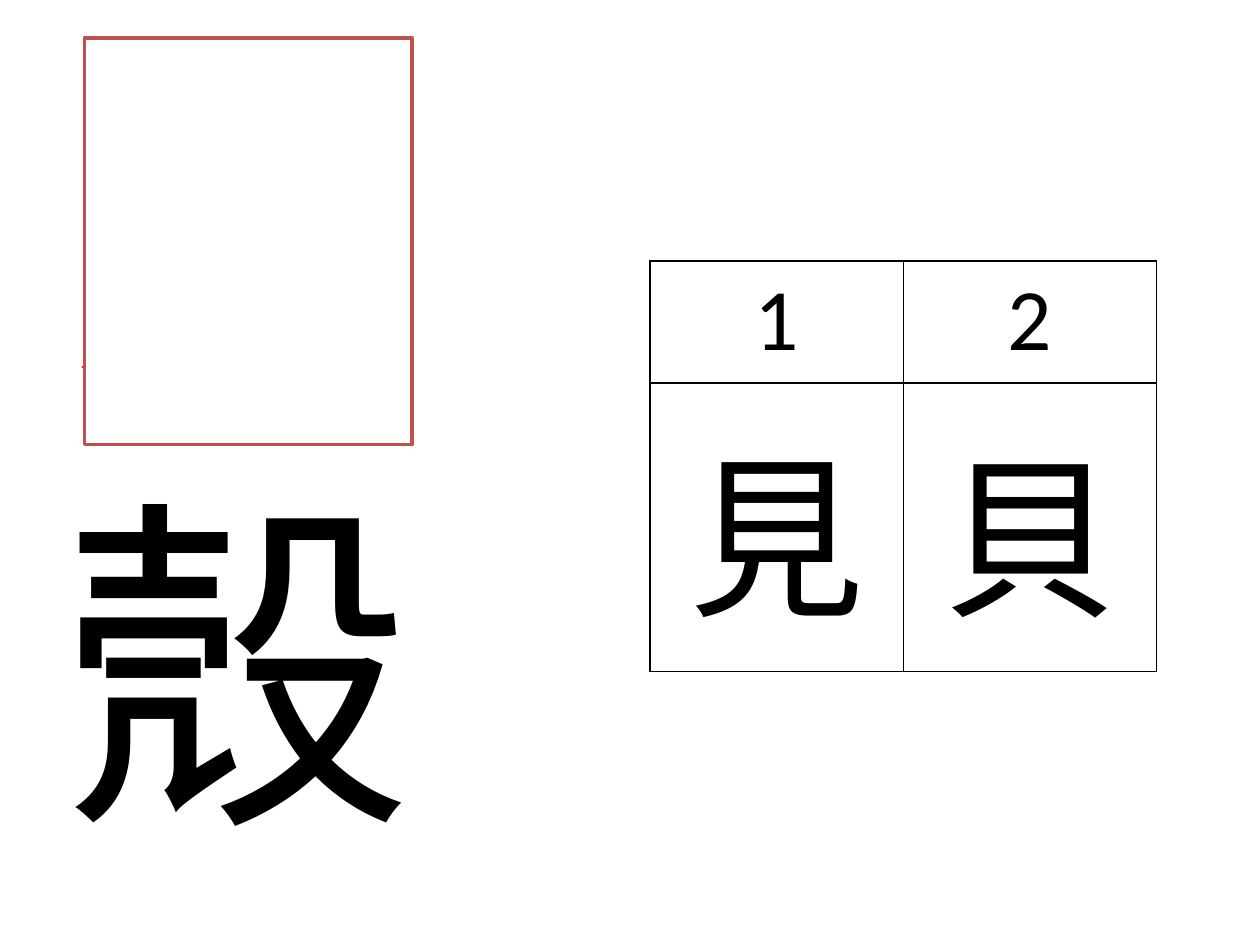
import pptx
import pptx.dml.color
import pptx.enum.shapes
import pptx.enum.text
import pptx.util
from lxml import etree
from pptx.oxml.ns import qn
from pptx.util import Inches

COLORS = {"answer": "FF0000", "ink": "000000", "cover": "FFFFFF", "frame": "C0504D"}
CJK = "Noto Sans CJK SC"
LATIN = "Calibri"


def rgb(name):
    return pptx.dml.color.RGBColor.from_string(COLORS[name])


def write(paragraph, text, size, face, color):
    paragraph.text = text
    font = paragraph.font
    font.size = pptx.util.Pt(size)
    font.color.rgb = rgb(color)
    font.name = face
    # East Asian typeface follows the Latin one
    properties = paragraph._p.pPr.find(qn("a:defRPr"))
    etree.SubElement(properties, qn("a:ea")).set("typeface", face)


deck = pptx.Presentation()
deck.slide_width, deck.slide_height = Inches(10), Inches(7.5)
slide = deck.slides.add_slide(deck.slide_layouts[6])

# Large characters: the answer above, the question below
for character, top, color in (("貝", 0.02, "answer"), ("殼", 3.51, "ink")):
    large = slide.shapes.add_textbox(Inches(0.39), Inches(top), Inches(4.41), Inches(3.54))
    frame = large.text_frame
    frame.word_wrap = True
    frame.auto_size = pptx.enum.text.MSO_AUTO_SIZE.NONE
    frame.vertical_anchor = pptx.enum.text.MSO_ANCHOR.TOP
    write(frame.paragraphs[0], character, 200, CJK, color)

# Cover over the answer
cover = slide.shapes.add_shape(
    pptx.enum.shapes.MSO_SHAPE.RECTANGLE,
    Inches(0.67), Inches(0.3), Inches(2.6), Inches(3.23))
cover.shadow.inherit = False
cover.fill.solid()
cover.fill.fore_color.rgb = rgb("cover")
cover.line.color.rgb = rgb("frame")
cover.line.width = pptx.util.Pt(2)

# Table of numbered choices
choices = slide.shapes.add_table(
    2, 2, Inches(5.16), Inches(2.07), Inches(4.02), Inches(3.26)).table
choices.first_row = choices.horz_banding = False
rows = [
    (0.97, ("1", "2"), 50, LATIN, pptx.enum.text.MSO_ANCHOR.TOP),
    (2.29, ("見", "貝"), 100, CJK, pptx.enum.text.MSO_ANCHOR.MIDDLE),
]
for r, (height, texts, size, face, anchor) in enumerate(rows):
    choices.rows[r].height = Inches(height)
    for c, text in enumerate(texts):
        cell = choices.cell(r, c)
        cell.vertical_anchor = anchor
        paragraph = cell.text_frame.paragraphs[0]
        paragraph.alignment = pptx.enum.text.PP_ALIGN.CENTER
        write(paragraph, text, size, face, "ink")
        # Thin border on every side, ahead of the fill
        cell_properties = cell._tc.get_or_add_tcPr()
        for side in ("a:lnL", "a:lnR", "a:lnT", "a:lnB"):
            border = etree.SubElement(cell_properties, qn(side), w=str(pptx.util.Pt(1)))
            ink = etree.SubElement(border, qn("a:solidFill"))
            etree.SubElement(ink, qn("a:srgbClr"), val=COLORS["ink"])
        cell.fill.background()

deck.save("out.pptx")
